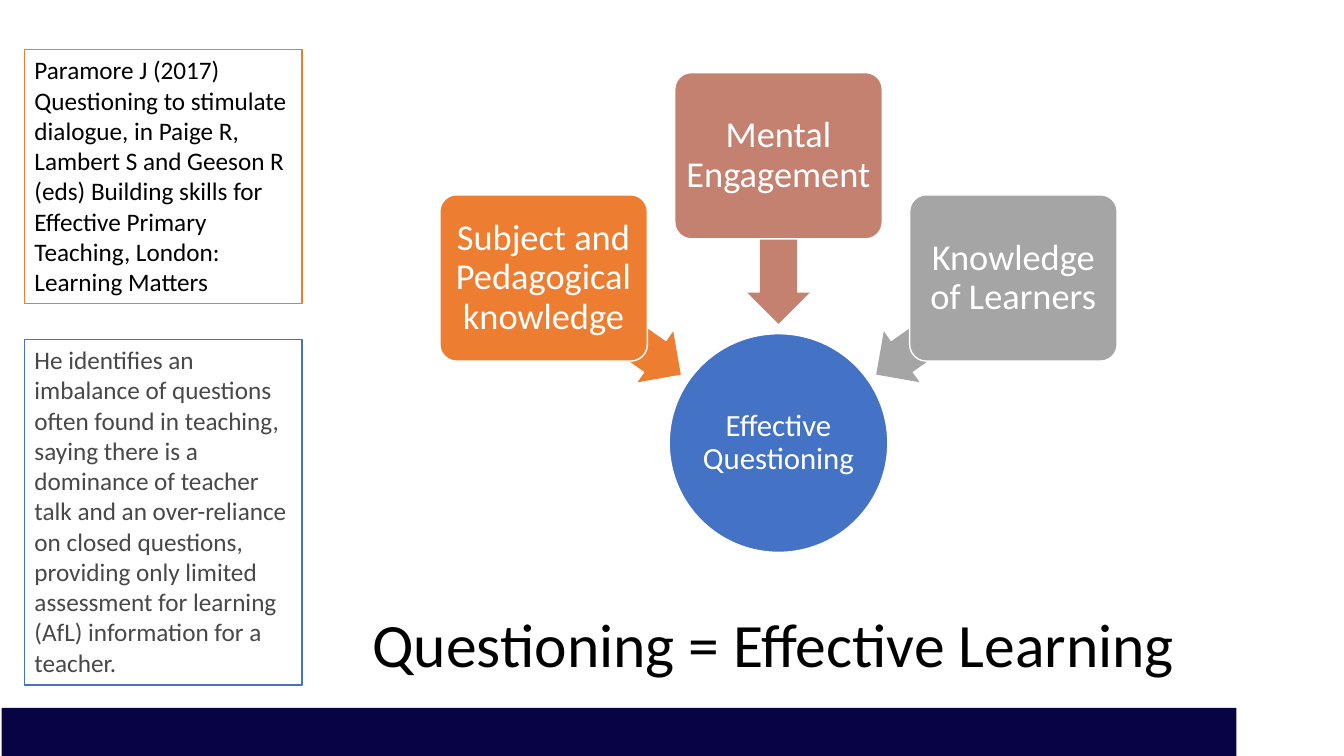
from pptx import Presentation
from pptx.dml.color import RGBColor
from pptx.enum.shapes import MSO_SHAPE
from pptx.enum.text import MSO_ANCHOR, PP_ALIGN
from pptx.util import Cm, Pt

RECT, ROUNDED = MSO_SHAPE.RECTANGLE, MSO_SHAPE.ROUNDED_RECTANGLE
OVAL, ARROW = MSO_SHAPE.OVAL, MSO_SHAPE.LEFT_ARROW
TOP, MIDDLE = MSO_ANCHOR.TOP, MSO_ANCHOR.MIDDLE
LEFT, CENTER = PP_ALIGN.LEFT, PP_ALIGN.CENTER

WHITE = RGBColor(0xFF, 0xFF, 0xFF)
BLACK = RGBColor(0x00, 0x00, 0x00)
CHARCOAL = RGBColor(0x48, 0x48, 0x48)
NAVY = RGBColor(0x08, 0x03, 0x43)
BLUE = RGBColor(0x44, 0x72, 0xC4)
ORANGE = RGBColor(0xED, 0x7D, 0x31)
ROSE = RGBColor(0xC4, 0x81, 0x70)
GRAY = RGBColor(0xA5, 0xA5, 0xA5)

CENTER_X = 19.62
CARD_WIDTH, CARD_HEIGHT = 5.23, 4.19
ARROW_LENGTH, ARROW_HEIGHT = 4.22, 1.57
HUB_SIZE = 5.51

REFERENCE = (
    "Paramore J (2017) Questioning to stimulate dialogue, in Paige R, Lambert S "
    "and Geeson R (eds) Building skills for Effective Primary Teaching, London: "
    "Learning Matters"
)
FINDING = (
    "He identifies an imbalance of questions often found in teaching, saying "
    "there is a dominance of teacher talk and an over-reliance on closed "
    "questions, providing only limited assessment for learning (AfL) "
    "information for a teacher."
)


def write(shape, text, size, color, align=LEFT, anchor=TOP, spacing=1.0,
          margins=(0.25, 0.13)):
    """Fill the shape with one paragraph; margins are (sides, top and bottom) in cm."""
    frame = shape.text_frame
    frame.word_wrap = True
    frame.vertical_anchor = anchor
    frame.margin_left = frame.margin_right = Cm(margins[0])
    frame.margin_top = frame.margin_bottom = Cm(margins[1])
    paragraph = frame.paragraphs[0]
    paragraph.alignment = align
    paragraph.line_spacing = spacing
    run = paragraph.add_run()
    run.text = text
    run.font.name = "Calibri"
    run.font.size = Pt(size)
    run.font.color.rgb = color


class SlideBuilder:
    def __init__(self, slide):
        self.shapes = slide.shapes

    def block(self, kind, left, top, width, height, fill, outline=None):
        shape = self.shapes.add_shape(kind, Cm(left), Cm(top), Cm(width), Cm(height))
        shape.shadow.inherit = False
        shape.fill.solid()
        shape.fill.fore_color.rgb = fill
        if outline is None:
            shape.line.fill.background()
        else:
            shape.line.color.rgb = outline
            shape.line.width = Pt(1)
        return shape

    def title(self, text):
        box = self.shapes.add_textbox(Cm(9.14), Cm(14.48), Cm(20.98), Cm(3.68))
        write(box, text, 44, BLACK, anchor=MIDDLE, spacing=0.9)

    def hub(self, text):
        circle = self.block(OVAL, CENTER_X - HUB_SIZE / 2, 8.41, HUB_SIZE, HUB_SIZE,
                            BLUE, WHITE)
        write(circle, text, 22, WHITE, CENTER, MIDDLE, 0.9, (0, 0))

    def arrow(self, center_x, center_y, rotation, color):
        arrow = self.block(ARROW, center_x - ARROW_LENGTH / 2,
                           center_y - ARROW_HEIGHT / 2,
                           ARROW_LENGTH, ARROW_HEIGHT, color)
        arrow.adjustments[0], arrow.adjustments[1] = 0.6, 0.5
        arrow.rotation = rotation

    def card(self, text, center_x, top, color):
        card = self.block(ROUNDED, center_x - CARD_WIDTH / 2, top,
                          CARD_WIDTH, CARD_HEIGHT, color, WHITE)
        card.adjustments[0] = 0.1
        write(card, text, 26, WHITE, CENTER, MIDDLE, 0.9, (0.13, 0.13))

    def note(self, text, top, height, outline, color):
        note = self.block(RECT, 0.62, top, 6.99, height, WHITE, outline)
        write(note, text, 18, color)


def main():
    deck = Presentation()
    deck.slide_width, deck.slide_height = Cm(33.87), Cm(19.05)
    builder = SlideBuilder(deck.slides.add_slide(deck.slide_layouts[6]))

    builder.block(RECT, 0.04, 17.84, 31.12, 1.22, NAVY)
    builder.title("Questioning = Effective Learning")
    builder.hub("Effective Questioning")

    # text, side of the hub, card top, arrow centre, arrow rotation, color
    factors = [
        ("Subject and Pedagogical knowledge", -1, 4.91, 8.23, 215, ORANGE),
        ("Mental Engagement", 0, 1.83, 6.05, 270, ROSE),
        ("Knowledge of Learners", 1, 4.91, 8.23, 325, GRAY),
    ]
    for text, side, card_top, arrow_y, rotation, color in factors:
        builder.arrow(CENTER_X + side * 4.19, arrow_y, rotation, color)
        builder.card(text, CENTER_X + side * 5.92, card_top, color)

    builder.note(REFERENCE, 1.25, 6.4, ORANGE, BLACK)
    builder.note(FINDING, 8.55, 8.71, BLUE, CHARCOAL)
    deck.save("out.pptx")


if __name__ == "__main__":
    main()
